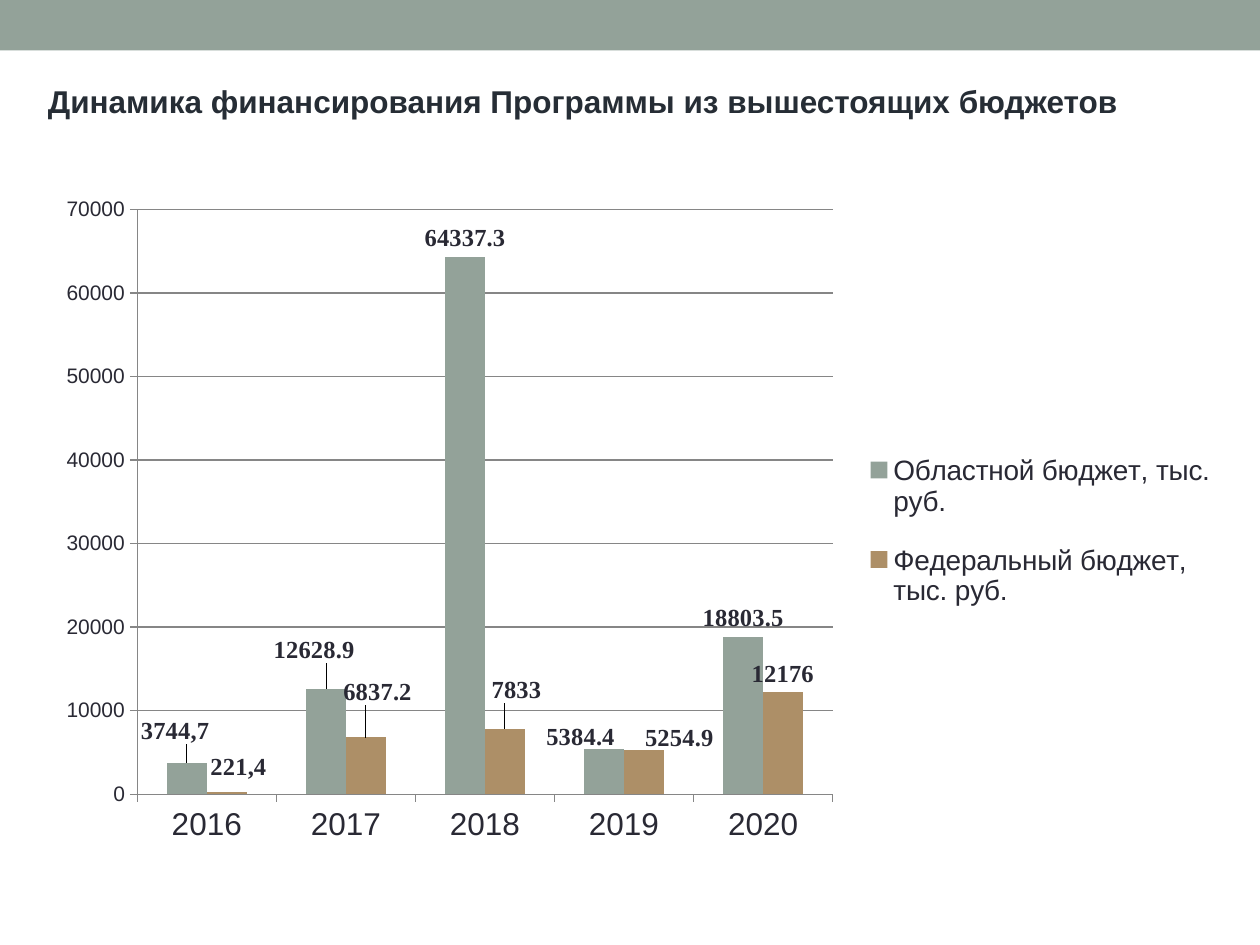
from dataclasses import dataclass

from lxml import etree
from pptx import Presentation
from pptx import util as u
from pptx.chart import data as chart_data
from pptx.dml.color import RGBColor
from pptx.enum import chart as chart_enum
from pptx.enum import shapes, text
from pptx.oxml import ns

SAGE = RGBColor(0x93, 0xA2, 0x99)
TAN = RGBColor(0xAD, 0x8F, 0x67)
INK = RGBColor(0x29, 0x29, 0x34)
TITLE_INK = RGBColor(0x26, 0x2D, 0x35)
GRID = RGBColor(0x86, 0x86, 0x86)
YEARS = ["2016", "2017", "2018", "2019", "2020"]


@dataclass(frozen=True)
class LabelShift:
    point: int
    x: float
    y: float
    wording: str = ""


@dataclass(frozen=True)
class Budget:
    name: str
    values: tuple[float, ...]
    color: RGBColor
    shifts: tuple[LabelShift, ...]


BUDGETS = (
    Budget(
        "Областной бюджет, тыс. руб.",
        (3744.7, 12628.9, 64337.3, 5384.4, 18803.5),
        SAGE,
        (
            LabelShift(0, -0.01, -0.02, "3744,7"),
            LabelShift(1, -0.01, -0.03),
            LabelShift(3, -0.02, 0.01),
        ),
    ),
    Budget(
        "Федеральный бюджет, тыс. руб.",
        (221.4, 6837.2, 7833, 5254.9, 12176),
        TAN,
        (
            LabelShift(0, 0.01, -0.01, "221,4"),
            LabelShift(1, 0.01, -0.04),
            LabelShift(2, 0.01, -0.03),
            LabelShift(3, 0.03, 0.01),
        ),
    ),
)


def format_font(font, *, size: float, name: str = "Arial",
                color: RGBColor = INK, bold: bool = False) -> None:
    font.size = u.Pt(size)
    font.name = name
    font.bold = bold
    font.color.rgb = color


def write_text(frame, wording: str, **style) -> None:
    para = frame.paragraphs[0]
    span = para.add_run()
    span.text = wording
    format_font(span.font, **style)


def make_layout(**settings: str | float):
    layout = etree.Element(ns.qn("c:layout"))
    manual = etree.SubElement(layout, ns.qn("c:manualLayout"))
    for key, value in settings.items():
        etree.SubElement(manual, ns.qn(f"c:{key}"), val=str(value))
    return layout


def replace_layout(element, position: int, layout) -> None:
    for old in element.findall(ns.qn("c:layout")):
        element.remove(old)
    element.insert(position, layout)


def format_series(series, budget: Budget) -> None:
    style = dict(size=14, name="Times New Roman", bold=True)
    series.format.fill.solid()
    series.format.fill.fore_color.rgb = budget.color
    series.invert_if_negative = False
    labels = series.data_labels
    labels.show_value = True
    labels.position = chart_enum.XL_LABEL_POSITION.OUTSIDE_END
    format_font(labels.font, **style)
    for shift in budget.shifts:
        label = series.points[shift.point].data_label
        if shift.wording:
            write_text(label.text_frame, shift.wording, **style)
        else:
            format_font(label.font, **style)
        label.position = chart_enum.XL_LABEL_POSITION.OUTSIDE_END
        element = series._element.xpath(
            f'c:dLbls/c:dLbl[c:idx/@val="{shift.point}"]')[0]
        replace_layout(element, 1, make_layout(x=shift.x, y=shift.y))


def format_axis(axis, size: float) -> None:
    format_font(axis.tick_labels.font, size=size)
    axis.major_tick_mark = chart_enum.XL_TICK_MARK.OUTSIDE
    axis.minor_tick_mark = chart_enum.XL_TICK_MARK.NONE
    axis.format.line.color.rgb = GRID
    axis.format.line.width = u.Pt(0.75)


def add_budget_chart(page) -> None:
    figures = chart_data.CategoryChartData()
    figures.categories = YEARS
    for budget in BUDGETS:
        figures.add_series(budget.name, budget.values)
    chart = page.shapes.add_chart(
        chart_enum.XL_CHART_TYPE.COLUMN_CLUSTERED, u.Inches(0.34),
        u.Inches(1.47), u.Inches(9.37), u.Inches(5.33), figures).chart
    format_font(chart.font, size=18)
    chart.has_title = False
    plot = chart.plots[0]
    plot.gap_width = 150
    plot.overlap = 0
    plot.vary_by_categories = False
    for series, budget in zip(plot.series, BUDGETS):
        format_series(series, budget)
    format_axis(chart.category_axis, 18)
    format_axis(chart.value_axis, 12)
    chart.value_axis.minimum_scale = 0
    chart.value_axis.maximum_scale = 70000
    chart.value_axis.major_unit = 10000
    chart.value_axis.has_major_gridlines = True
    grid_line = chart.value_axis.major_gridlines.format.line
    grid_line.color.rgb = GRID
    grid_line.width = u.Pt(0.75)
    chart.has_legend = True
    legend = chart.legend
    legend.position = chart_enum.XL_LEGEND_POSITION.RIGHT
    legend.include_in_layout = False
    format_font(legend.font, size=16)
    replace_layout(legend._element, 1, make_layout(
        xMode="edge", yMode="edge", x=0.69, y=0.36, w=0.31, h=0.31))
    replace_layout(chart._chartSpace.chart.plotArea, 0, make_layout(
        layoutTarget="inner", xMode="edge", yMode="edge",
        x=0.08, y=0.036, w=0.589, h=0.871))


def add_band(page) -> None:
    band = page.shapes.add_shape(
        shapes.MSO_SHAPE.RECTANGLE, 0, 0, u.Inches(10), u.Inches(0.4))
    band.shadow.inherit = False
    band.fill.solid()
    band.fill.fore_color.rgb = SAGE
    band.line.fill.background()


def set_title(page, wording: str) -> None:
    box = page.shapes.title
    box.left, box.top = u.Inches(0.28), u.Inches(0.6)
    box.width, box.height = u.Inches(9.45), u.Inches(0.71)
    frame = box.text_frame
    frame.word_wrap = True
    frame.auto_size = text.MSO_AUTO_SIZE.NONE
    frame.vertical_anchor = text.MSO_ANCHOR.TOP
    frame.paragraphs[0].alignment = text.PP_ALIGN.LEFT
    write_text(frame, wording, size=18, color=TITLE_INK, bold=True)


def main() -> None:
    deck = Presentation()
    deck.slide_width, deck.slide_height = u.Inches(10), u.Inches(7.5)
    page = deck.slides.add_slide(deck.slide_layouts.get_by_name("Title Only"))
    add_band(page)
    add_budget_chart(page)
    set_title(page, "Динамика финансирования Программы из вышестоящих бюджетов")
    deck.save("out.pptx")


if __name__ == "__main__":
    main()
